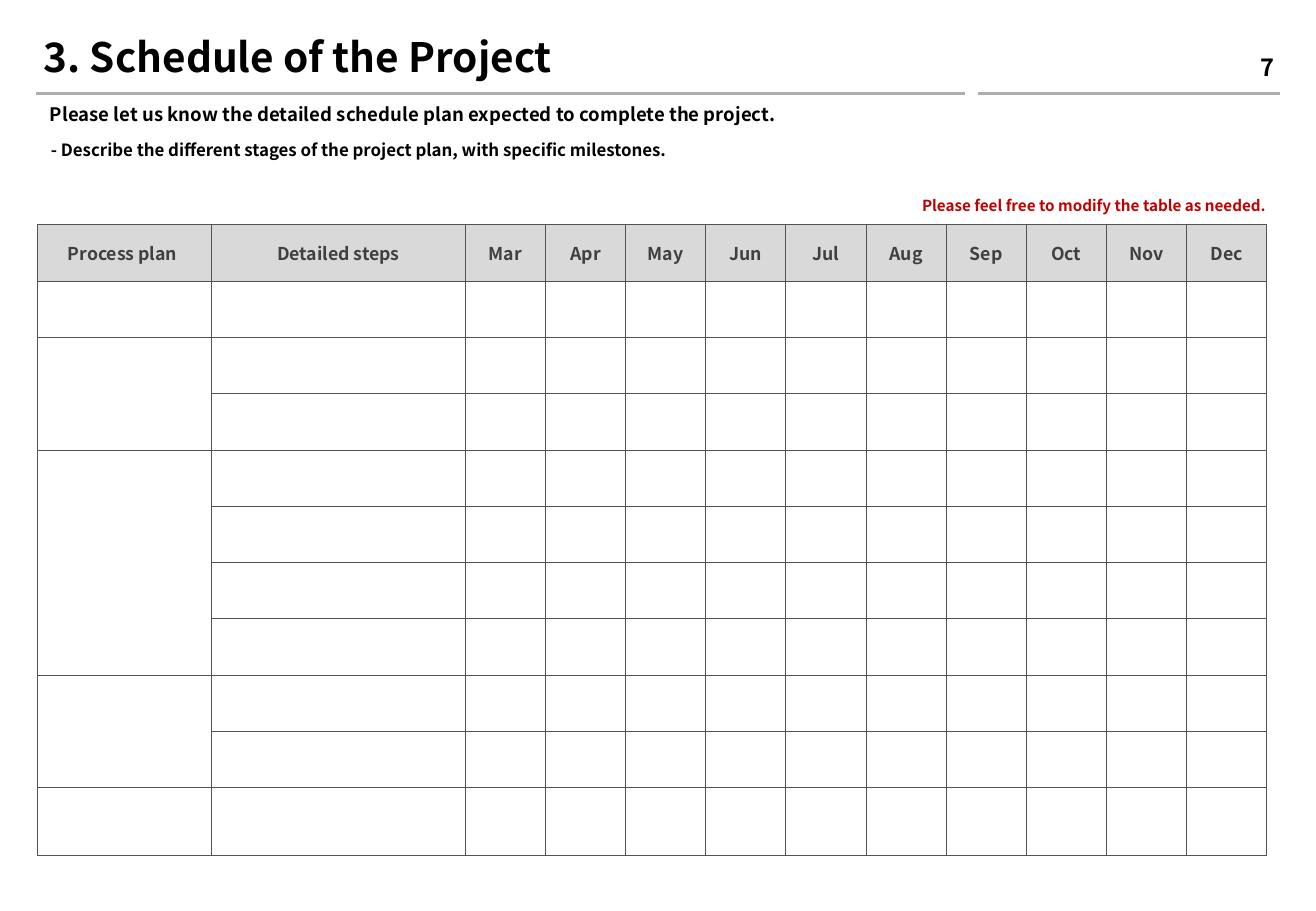
from lxml import etree
from pptx import Presentation, util as u
from pptx.dml import color
from pptx.enum import shapes, text
from pptx.oxml import ns

INSET = u.Inches(0.05)
ALIGN = text.PP_ALIGN
MIDDLE = text.MSO_ANCHOR.MIDDLE
TIGHT = dict.fromkeys(
    ("margin_left", "margin_right", "margin_top", "margin_bottom"), INSET)


def rgb(value):
    return color.RGBColor.from_string(value)


def style_up(target, values):
    for name, value in values.items():
        setattr(target, name, value)


class ProposalPage:
    font = "Noto Sans CJK KR"
    ink, rule_ink, border_ink = "000000", "AEAEAE", "535353"

    def __init__(self, deck, layout):
        self.slide = deck.slides.add_slide(deck.slide_layouts[layout])
        self.column = deck.slide_width / 100
        self.row = deck.slide_height / 100

    def x(self, columns):
        return u.Emu(round(columns * self.column))

    def y(self, rows):
        return u.Emu(round(rows * self.row))

    def box(self, left, top, width, height):
        return self.x(left), self.y(top), self.x(width), self.y(height)

    def add_wording(self, paragraph, wording, size, ink, align=ALIGN.LEFT, spacing=1.0):
        run = paragraph.add_run()
        run.text = wording
        style_up(run.font, {"name": self.font, "size": u.Pt(size), "bold": True})
        run.font.color.rgb = rgb(ink)
        style_up(paragraph, {"alignment": align, "space_before": u.Pt(0),
                             "line_spacing": spacing})

    def fill_frame(self, frame, wording, size, ink=None, align=ALIGN.LEFT,
                   spacing=1.0, **layout):
        style_up(frame, {"word_wrap": True, "auto_size": text.MSO_AUTO_SIZE.NONE,
                         "vertical_anchor": text.MSO_ANCHOR.TOP, **layout})
        self.add_wording(frame.paragraphs[0], wording, size, ink or self.ink,
                         align, spacing)

    def placeholder(self, index, place, wording, size, **style):
        holder = self.slide.placeholders[index]
        style_up(holder, dict(zip(("left", "top", "width", "height"), self.box(*place))))
        properties = holder.text_frame.paragraphs[0]._p.get_or_add_pPr()
        properties.set("marL", "0")
        properties.set("indent", "0")
        etree.SubElement(properties, ns.qn("a:buNone"))
        self.fill_frame(holder.text_frame, wording, size, **style)

    def note(self, place, wording, size, **style):
        frame = self.slide.shapes.add_textbox(*self.box(*place)).text_frame
        self.fill_frame(frame, wording, size, **style)

    def rule(self, start, end, level):
        line = self.slide.shapes.add_connector(
            shapes.MSO_CONNECTOR.STRAIGHT,
            self.x(start), self.y(level), self.x(end), self.y(level))
        line.line.color.rgb = rgb(self.rule_ink)
        line.line.width = u.Pt(2)
        etree.SubElement(line._element.spPr, ns.qn("a:effectLst"))

    def cell(self, cell, fill):
        style_up(cell, {**TIGHT, "vertical_anchor": MIDDLE})
        properties = cell._tc.get_or_add_tcPr()
        for side in "LRTB":
            edge = etree.SubElement(
                properties, ns.qn(f"a:ln{side}"), w=str(u.Pt(0.5)))
            paint = etree.SubElement(edge, ns.qn("a:solidFill"))
            etree.SubElement(paint, ns.qn("a:srgbClr"), val=self.border_ink)
        cell.fill.solid()
        cell.fill.fore_color.rgb = rgb(fill)

    def schedule(self, left, top, widths, heights, headings, stages):
        place = self.box(left, top, sum(widths), sum(heights))
        table = self.slide.shapes.add_table(len(heights), len(widths), *place).table
        style_up(table, {"first_row": False, "horz_banding": False})
        for column, width in zip(table.columns, widths):
            column.width = self.x(width)
        for row, height in zip(table.rows, heights):
            row.height = self.y(height)
        for index, row in enumerate(table.rows):
            for cell in row.cells:
                self.cell(cell, "FFFFFF" if index else "D9D9D9")
        for cell, heading in zip(table.rows[0].cells, headings):
            self.add_wording(cell.text_frame.paragraphs[0], heading, 10.5, "404040",
                             ALIGN.CENTER)
        first = 1
        for steps in stages:
            if steps > 1:
                table.cell(first, 0).merge(table.cell(first + steps - 1, 0))
            first += steps


def main():
    deck = Presentation()
    deck.slide_width, deck.slide_height = u.Inches(10.83), u.Inches(7.5)
    page = ProposalPage(deck, layout=3)

    for start, end in ((2.77, 73.31), (74.33, 97.23)):
        page.rule(start, end, 10.27)

    months = "Mar Apr May Jun Jul Aug Sep Oct Nov Dec".split()
    page.schedule(
        2.86, 24.67,
        widths=[13.2, 19.3] + [6.09] * len(months),
        heights=[6.18] * 10 + [7.4],
        headings=["Process plan ", "Detailed steps"] + months,
        stages=[1, 2, 4, 2, 1])

    page.placeholder(0, (2.86, 2.8, 67.96, 7.33), "3. Schedule of the Project", 24,
                     spacing=0.9, vertical_anchor=MIDDLE, **TIGHT)
    page.placeholder(
        1, (2.86, 10.93, 92.52, 3.6),
        "Please let us know the detailed schedule plan expected to complete the project.",
        11, spacing=0.9)
    page.placeholder(
        2, (2.95, 14.67, 92.52, 3.6),
        "- Describe the different stages of the project plan, with specific milestones.",
        10)
    page.note((54.39, 20.93, 42.66, 3.33),
              "Please feel free to modify the table as needed.", 9,
              ink="C00000", align=ALIGN.RIGHT)
    page.note((95.29, 5.07, 2.03, 4.53), "7", 14, align=ALIGN.RIGHT,
              vertical_anchor=MIDDLE, **{**TIGHT, "word_wrap": False})

    deck.save("out.pptx")


if __name__ == "__main__":
    main()
